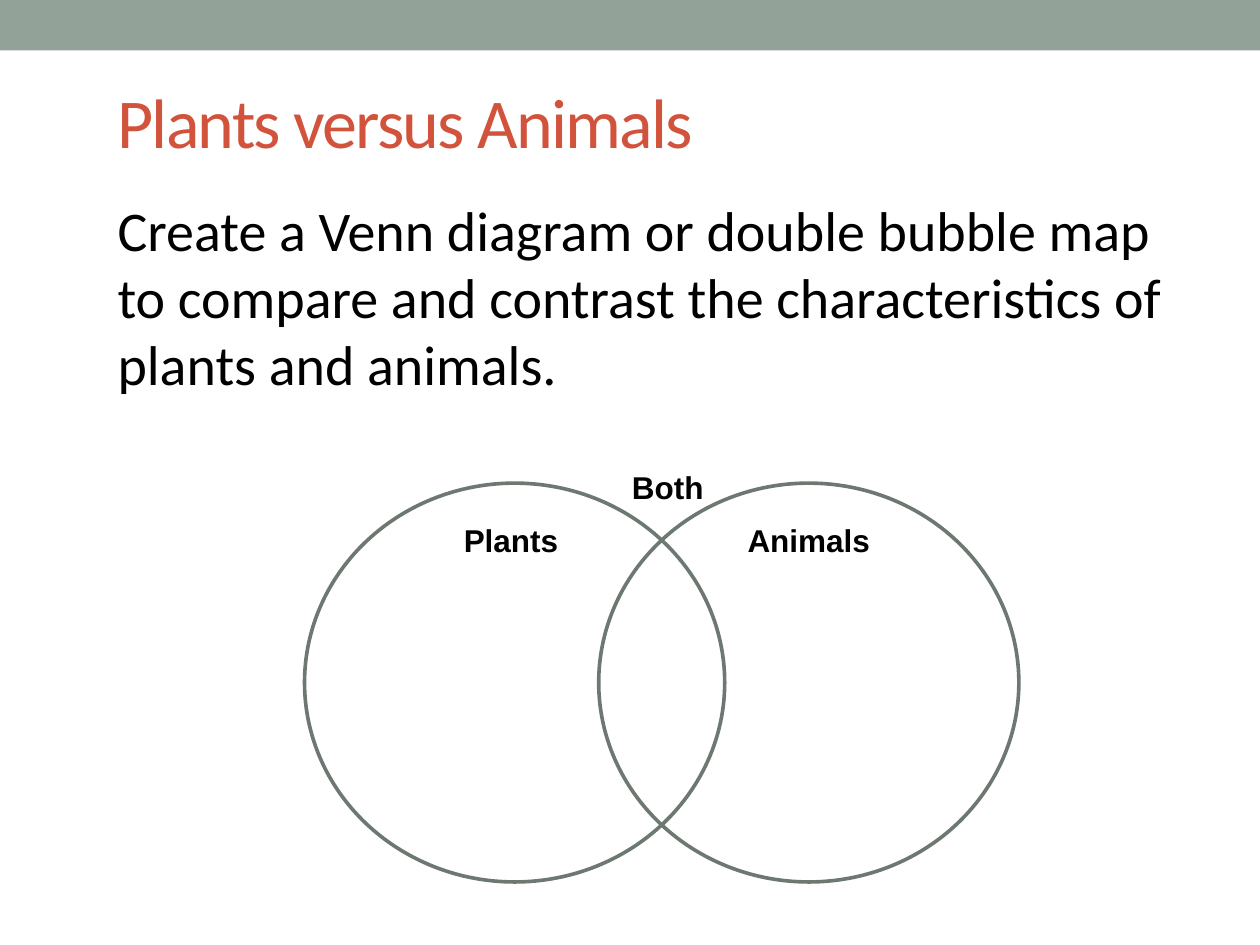
from dataclasses import dataclass
from pptx import Presentation
from pptx.dml.color import RGBColor
from pptx.enum.shapes import MSO_SHAPE
from pptx.enum.text import MSO_ANCHOR
from pptx.util import Cm, Pt

RECT = MSO_SHAPE.RECTANGLE
OVAL = MSO_SHAPE.OVAL
TOP = MSO_ANCHOR.TOP
MIDDLE = MSO_ANCHOR.MIDDLE


@dataclass
class Theme:
    sage: RGBColor = RGBColor(0x93, 0xA2, 0x99)
    rust: RGBColor = RGBColor(0xD2, 0x53, 0x3C)
    black: RGBColor = RGBColor(0, 0, 0)
    ring: RGBColor = RGBColor(0x6D, 0x78, 0x71)
    head: Pt = Pt(40)
    body: Pt = Pt(32)
    label: Pt = Pt(18)
    line: Pt = Pt(2.08)


theme = Theme()


def add_text(text, left, top, width, height, face, size, color, bold=False, anchor=TOP):
    box = slide.shapes.add_textbox(Cm(left), Cm(top), Cm(width), Cm(height))
    frame = box.text_frame
    frame.word_wrap = True
    frame.vertical_anchor = anchor
    frame.text = text
    run = frame.paragraphs[0].runs[0]
    run.font.name = face
    run.font.size = size
    run.font.bold = bold
    run.font.color.rgb = color
    return run


deck = Presentation()
deck.slide_width = Cm(25.4)
deck.slide_height = Cm(19.05)
slide = deck.slides.add_slide(deck.slide_layouts[6])

band = slide.shapes.add_shape(RECT, 0, 0, deck.slide_width, Cm(1.02))
band.shadow.inherit = False
band.fill.solid()
band.fill.fore_color.rgb = theme.sage
band.line.fill.background()

title = add_text("Plants versus Animals", 2.12, 1.06, 22.01, 2.75,
                 "Calibri", theme.head, theme.rust, anchor=MIDDLE)
title.font._element.set("spc", "-100")

add_text("Create a Venn diagram or double bubble map to compare and contrast "
         "the characteristics of plants and animals.",
         2.12, 3.81, 22.01, 13.76, "Calibri", theme.body, theme.black)

for left in (6.14, 12.07):
    ring = slide.shapes.add_shape(OVAL, Cm(left), Cm(9.74), Cm(8.47), Cm(8.04))
    ring.shadow.inherit = False
    ring.fill.background()
    ring.line.color.rgb = theme.ring
    ring.line.width = theme.line

for text, left, top, width in (
    ("Plants", 9.1, 10.37, 2.54),
    ("Animals", 14.82, 10.37, 3.18),
    ("Both", 12.49, 9.31, 2.12),
):
    add_text(text, left, top, width, 1.03, "Arial", theme.label, theme.black, bold=True)

deck.save("out.pptx")
